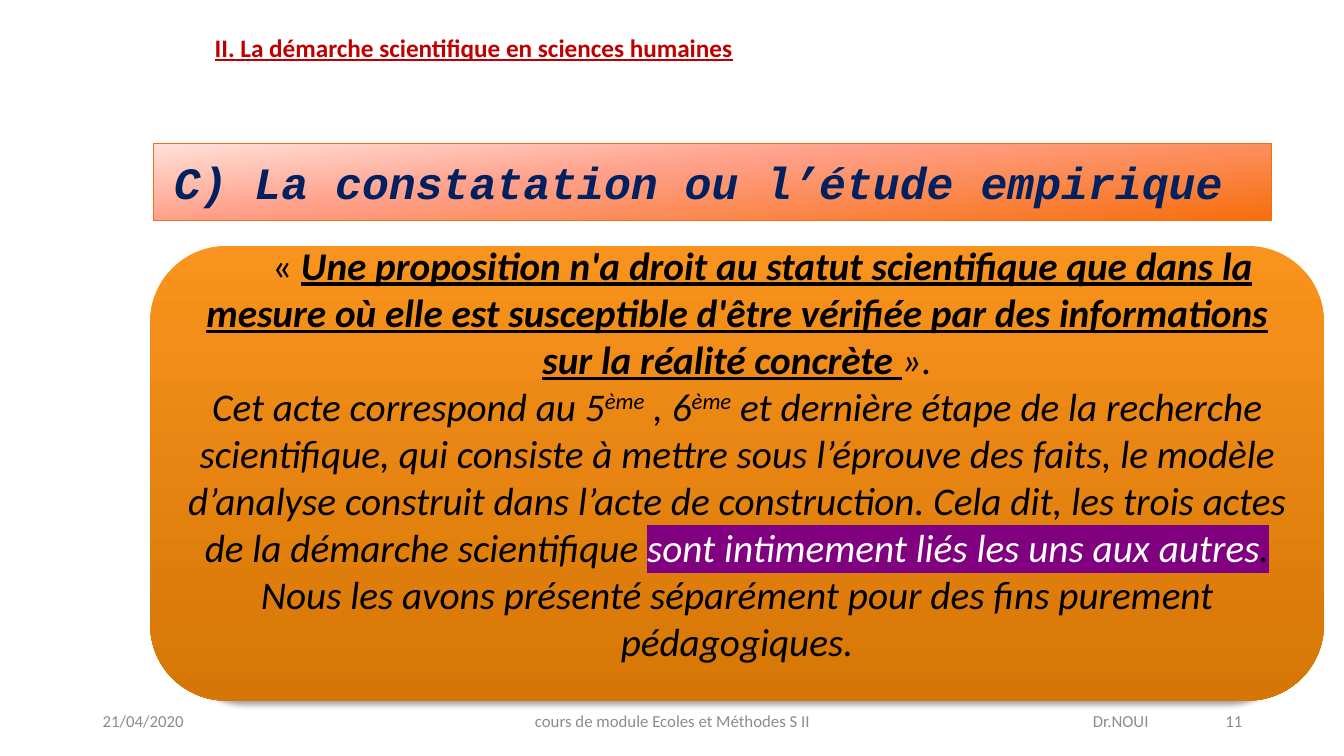
from lxml import etree
from pptx import Presentation
from pptx.dml.color import RGBColor
from pptx.enum.shapes import MSO_SHAPE
from pptx.enum.text import MSO_ANCHOR, MSO_AUTO_SIZE, PP_ALIGN
from pptx.oxml.ns import qn
from pptx.util import Inches, Pt

LEFT, CENTER, RIGHT = PP_ALIGN.LEFT, PP_ALIGN.CENTER, PP_ALIGN.RIGHT
MIDDLE, TOP = MSO_ANCHOR.MIDDLE, MSO_ANCHOR.TOP
NO_AUTOFIT = MSO_AUTO_SIZE.NONE
ROUNDED = MSO_SHAPE.ROUNDED_RECTANGLE

RED = RGBColor(0xC0, 0x00, 0x00)
GREY = RGBColor(0x8C, 0x8C, 0x8C)
NAVY = RGBColor(0x00, 0x20, 0x60)
BLACK = RGBColor(0x00, 0x00, 0x00)
WHITE = RGBColor(0xFF, 0xFF, 0xFF)
PURPLE = RGBColor(0x80, 0x00, 0x80)
ORANGE_LINE = RGBColor(0xEC, 0x70, 0x16)
TITLE_STOPS = [(0, RGBColor(0xFF, 0xE1, 0xDA)), (40, RGBColor(0xFF, 0xA0, 0x8A)),
               (100, RGBColor(0xF7, 0x6E, 0x0B))]
QUOTE_STOPS = [(0, RGBColor(0xF8, 0x93, 0x1D)), (100, RGBColor(0xD6, 0x76, 0x06))]

CHAPTER = "II. La démarche scientifique en sciences humaines"
TITLE = "C) La constatation ou l’étude empirique "

ITALIC = {"italic": True}
KEY = {"italic": True, "bold": True, "underline": True}
SUPER = {"italic": True, "baseline": 30}
QUOTE = [
    [("\t« ", {}),
     ("Une proposition n'a droit au statut scientifique que dans la mesure où elle est "
      "susceptible d'être vérifiée par des informations sur la réalité concrète ", KEY),
     ("».", ITALIC)],
    [("Cet acte correspond au 5", ITALIC), ("ème", SUPER), (" , 6", ITALIC), ("ème", SUPER),
     (" et dernière étape de la recherche scientifique, qui consiste à mettre sous l’éprouve "
      "des faits, le modèle d’analyse construit dans l’acte de construction. Cela dit, les "
      "trois actes de la démarche scientifique ", ITALIC),
     ("sont intimement liés les uns aux autres",
      {"italic": True, "color": WHITE, "highlight": PURPLE}),
     (". ", {"italic": True, "highlight": PURPLE}),
     ("Nous les avons présenté séparément pour des fins purement pédagogiques.", ITALIC)],
]

# text, left, width, alignment
FOOTER = [
    ("21/04/2020", 0.92, 3, LEFT),
    ("cours de module Ecoles et Méthodes S II", 4.42, 4.5, CENTER),
    ("Dr.NOUI", 9.42, 2.07, RIGHT),
    ("11", 11.49, 0.93, RIGHT),
]
FOOTER_TOP, FOOTER_HEIGHT = 6.95, 0.4


def add_run(paragraph, text, size, color, font="Calibri", bold=False, italic=False,
            underline=False, baseline=0, highlight=None):
    run = paragraph.add_run()
    run.text = text
    run.font.name, run.font.size = font, Pt(size)
    run.font.bold, run.font.italic, run.font.underline = bold, italic, underline
    run.font.color.rgb = color
    properties = run.font._element
    if baseline:
        properties.set("baseline", str(baseline * 1000))
    if highlight is not None:
        mark = etree.Element(qn("a:highlight"))
        etree.SubElement(mark, qn("a:srgbClr"), val=str(highlight))
        properties.find(qn("a:solidFill")).addnext(mark)


def fill_gradient(shape, stops, angle):
    shape.fill.gradient()
    gradient = shape._element.spPr.find(qn("a:gradFill"))
    stop_list = gradient.find(qn("a:gsLst"))
    for old_stop in list(stop_list):
        stop_list.remove(old_stop)
    for share, color in stops:
        stop = etree.SubElement(stop_list, qn("a:gs"), pos=str(share * 1000))
        etree.SubElement(stop, qn("a:srgbClr"), val=str(color))
    direction = gradient.find(qn("a:lin"))
    direction.set("ang", str(angle * 60000))
    direction.set("scaled", "0")


def add_soft_shadow(shape):
    shape.shadow.inherit = False
    effects = shape._element.spPr.find(qn("a:effectLst"))
    shadow = etree.SubElement(effects, qn("a:outerShdw"), blurRad=str(Pt(3.5)),
                              dist=str(Pt(4)), dir="5400000", sx="96000", rotWithShape="0")
    color = etree.SubElement(shadow, qn("a:srgbClr"), val=str(BLACK))
    etree.SubElement(color, qn("a:alpha"), val="34000")


def add_label(slide, text, left, top, width, height, align, anchor, wrap, **style):
    box = slide.shapes.add_textbox(Inches(left), Inches(top), Inches(width), Inches(height))
    frame = box.text_frame
    frame.word_wrap, frame.vertical_anchor = wrap, anchor
    frame.paragraphs[0].alignment = align
    add_run(frame.paragraphs[0], text, **style)


def add_title(slide):
    title = slide.shapes.title
    title.left, title.top = Inches(1.52), Inches(1.42)
    title.width, title.height = Inches(11.09), Inches(0.77)
    fill_gradient(title, TITLE_STOPS, 84)
    title.line.color.rgb, title.line.width = ORANGE_LINE, Pt(0.75)
    frame = title.text_frame
    frame.auto_size, frame.word_wrap, frame.vertical_anchor = NO_AUTOFIT, True, MIDDLE
    frame.paragraphs[0].alignment = CENTER
    add_run(frame.paragraphs[0], TITLE, 32, NAVY, "Courier New", bold=True, italic=True)


def add_quote(slide):
    panel = slide.shapes.add_shape(ROUNDED, Inches(1.49), Inches(2.44),
                                   Inches(11.64), Inches(4.51))
    fill_gradient(panel, QUOTE_STOPS, 90)
    panel.line.fill.background()
    add_soft_shadow(panel)
    frame = panel.text_frame
    frame.word_wrap, frame.vertical_anchor = True, MIDDLE
    frame.margin_bottom = Inches(0.45)
    for number, runs in enumerate(QUOTE):
        paragraph = frame.add_paragraph() if number else frame.paragraphs[0]
        paragraph.alignment = CENTER
        for text, style in runs:
            add_run(paragraph, text, 28, **{"color": BLACK, **style})


def main():
    deck = Presentation()
    deck.slide_width, deck.slide_height = Inches(13.33), Inches(7.5)
    slide = deck.slides.add_slide(deck.slide_layouts.get_by_name("Title Only"))
    add_label(slide, CHAPTER, 2.03, 0.27, 5.38, 0.4, LEFT, TOP, False,
              size=18, color=RED, bold=True, underline=True)
    for text, left, width, align in FOOTER:
        add_label(slide, text, left, FOOTER_TOP, width, FOOTER_HEIGHT, align, MIDDLE, True,
                  size=12, color=GREY)
    add_title(slide)
    add_quote(slide)
    deck.save("out.pptx")


if __name__ == "__main__":
    main()
